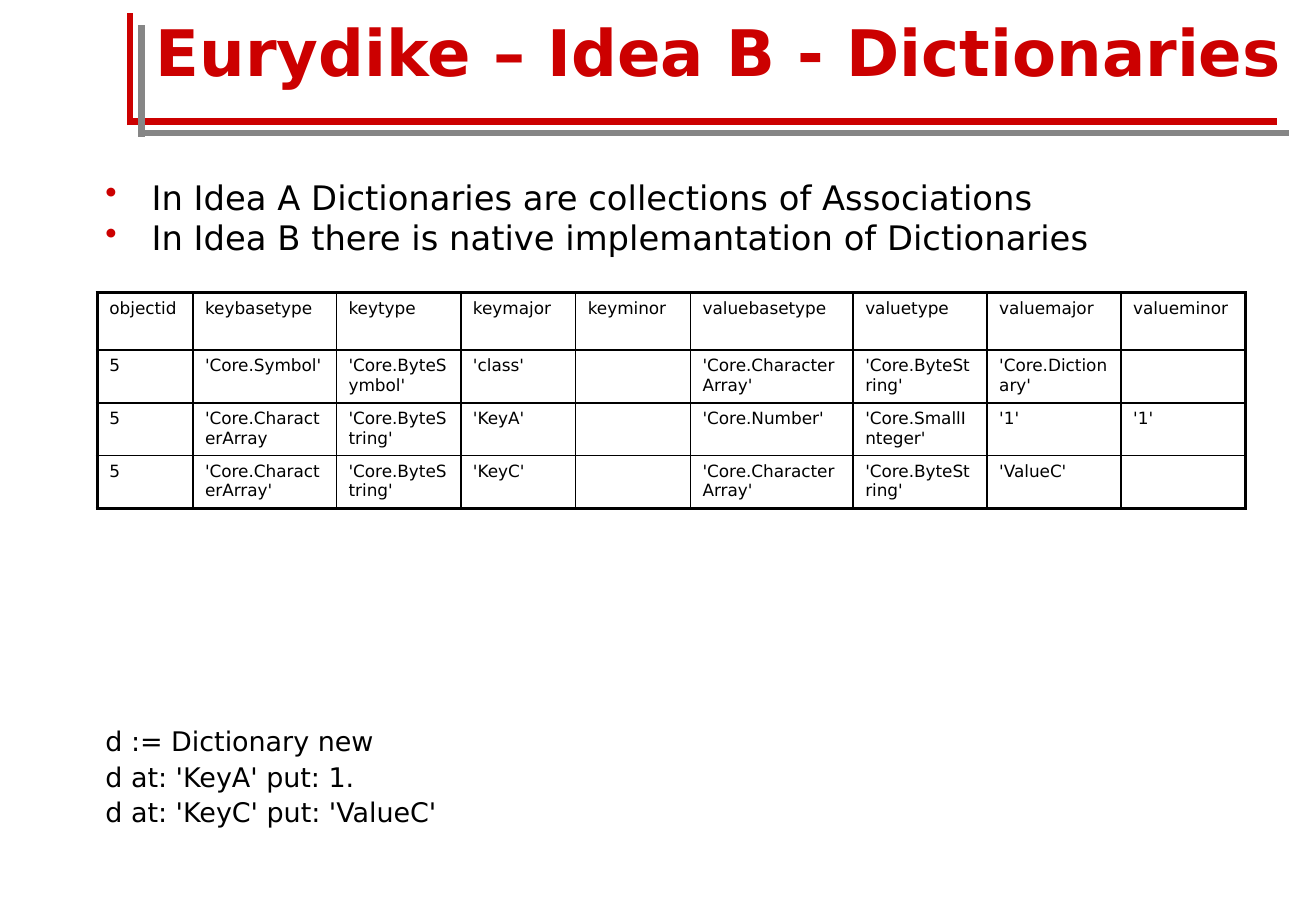
from lxml import etree
from pptx import Presentation
from pptx.dml.color import RGBColor
from pptx.enum.shapes import MSO_CONNECTOR
from pptx.enum.text import MSO_ANCHOR, PP_ALIGN
from pptx.oxml.ns import qn
from pptx.util import Inches, Pt

STRAIGHT = MSO_CONNECTOR.STRAIGHT
MIDDLE, TOP = MSO_ANCHOR.MIDDLE, MSO_ANCHOR.TOP
CENTER, LEFT = PP_ALIGN.CENTER, PP_ALIGN.LEFT

RED = RGBColor(0xCC, 0x00, 0x00)
GREY = RGBColor(0x86, 0x86, 0x86)
BLACK = RGBColor(0x00, 0x00, 0x00)

FONT = "DejaVu Sans"
SLIDE_W, SLIDE_H = Inches(10.83), Inches(7.5)
HANGING = Inches(0.38)
THIN, THICK = Pt(1), Pt(2.25)

TITLE_FONT = {"name": FONT, "size": Pt(38), "bold": True}
BULLET_FONT = {"name": FONT, "size": Pt(20)}
CODE_FONT = {"name": FONT, "size": Pt(16)}
CELL_FONT = {"name": FONT, "size": Pt(10)}

IDEAS = [
    "In Idea A Dictionaries are collections of Associations",
    "In Idea B there is native implemantation of Dictionaries",
]
CODE = [
    "d := Dictionary new",
    "d at: 'KeyA' put: 1.",
    "d at: 'KeyC' put: 'ValueC'",
]
ENTRIES = [
    ["objectid", "keybasetype", "keytype", "keymajor", "keyminor",
     "valuebasetype", "valuetype", "valuemajor", "valueminor"],
    ["5", "'Core.Symbol'", "'Core.ByteSymbol'", "'class'", "",
     "'Core.CharacterArray'", "'Core.ByteString'", "'Core.Dictionary'", ""],
    ["5", "'Core.CharacterArray", "'Core.ByteString'", "'KeyA'", "",
     "'Core.Number'", "'Core.SmallInteger'", "'1'", "'1'"],
    ["5", "'Core.CharacterArray'", "'Core.ByteString'", "'KeyC'", "",
     "'Core.CharacterArray'", "'Core.ByteString'", "'ValueC'", ""],
]
COLUMN_UNITS = [10, 15, 13, 12, 12, 17, 14, 14, 13]
ROW_UNITS = [47, 43, 43, 43]


def across(percent):
    return int(SLIDE_W * percent / 100)


def down(percent):
    return int(SLIDE_H * percent / 100)


def area(left, top, width, height):
    """Turn shares of the slide, in percent, into lengths."""
    return across(left), down(top), across(width), down(height)


def style(font, color, formats):
    for attribute, value in formats.items():
        setattr(font, attribute, value)
    font.color.rgb = color


def add_rule(slide, start, end, color):
    rule = slide.shapes.add_connector(
        STRAIGHT, across(start[0]), down(start[1]), across(end[0]), down(end[1]))
    rule.line.color.rgb = color
    rule.line.width = Pt(4)
    etree.SubElement(rule._element.spPr, qn("a:effectLst"))


def add_bracket(slide, shift_x, shift_y, color):
    """Draw the corner of two rules that frames the title."""
    for x1, y1, x2, y2 in ((9.79, 13.33, 97.05, 13.33), (9.88, 13.73, 9.88, 1.47)):
        add_rule(slide, (x1 + shift_x, y1 + shift_y),
                 (x2 + shift_x, y2 + shift_y), color)


def set_indent(paragraph, bullet):
    properties = paragraph._p.get_or_add_pPr()
    properties.set("marL", str(HANGING))
    properties.set("indent", str(-HANGING))
    if bullet:
        bullet_color = etree.SubElement(properties, qn("a:buClr"))
        etree.SubElement(bullet_color, qn("a:srgbClr"), val=str(RED))
        etree.SubElement(properties, qn("a:buChar"), char=bullet)


def add_text(slide, place, lines, formats, color=BLACK, anchor=TOP,
             align=LEFT, spacing=None, gap=None, hanging=False, bullet=None):
    frame = slide.shapes.add_textbox(*place).text_frame
    frame.word_wrap = True
    frame.vertical_anchor = anchor
    for index, line in enumerate(lines):
        paragraph = frame.add_paragraph() if index else frame.paragraphs[0]
        if hanging:
            set_indent(paragraph, bullet)
        paragraph.alignment = align
        if spacing:
            paragraph.line_spacing = spacing
        if index and gap:
            paragraph.space_before = gap
        run = paragraph.add_run()
        run.text = line
        style(run.font, color, formats)


def set_borders(cell, widths):
    properties = cell._tc.get_or_add_tcPr()
    for position, (side, width) in enumerate(widths.items()):
        border = etree.Element(qn(f"a:{side}"), w=str(width))
        fill = etree.SubElement(border, qn("a:solidFill"))
        etree.SubElement(fill, qn("a:srgbClr"), val=str(BLACK))
        properties.insert(position, border)


def add_entry_table(slide, place, entries):
    table = slide.shapes.add_table(len(entries), len(entries[0]), *place).table
    table.first_row = table.horz_banding = False
    for column, units in zip(table.columns, COLUMN_UNITS):
        column.width = place[2] * units // sum(COLUMN_UNITS)
    for row, units in zip(table.rows, ROW_UNITS):
        row.height = place[3] * units // sum(ROW_UNITS)

    last_row, last_column = len(entries) - 1, len(entries[0]) - 1
    for r, entry in enumerate(entries):
        for c, value in enumerate(entry):
            cell = table.cell(r, c)
            cell.fill.background()
            set_borders(cell, {
                "lnL": THICK if c == 0 else THIN,
                "lnR": THICK if c == last_column else THIN,
                "lnT": THICK if r == 0 else THIN,
                "lnB": THICK if r == last_row else THIN,
            })
            if value:
                run = cell.text_frame.paragraphs[0].add_run()
                run.text = value
                style(run.font, BLACK, CELL_FONT)


def main():
    deck = Presentation()
    deck.slide_width, deck.slide_height = SLIDE_W, SLIDE_H
    slide = deck.slides.add_slide(deck.slide_layouts[6])

    # Title with its double bracket
    add_bracket(slide, 0, 0, RED)
    add_bracket(slide, 0.87, 1.27, GREY)
    add_text(slide, area(9.23, 0, 90.77, 11.07),
             ["Eurydike – Idea B - Dictionaries"], TITLE_FONT,
             color=RED, anchor=MIDDLE, align=CENTER)

    # Ideas and sample code
    add_text(slide, area(7.11, 19.6, 91.5, 74.53), IDEAS, BULLET_FONT,
             spacing=0.8, gap=Pt(4.7), hanging=True, bullet="•")
    add_text(slide, area(7.11, 79.33, 91.5, 16.8), CODE, CODE_FONT,
             spacing=0.9, gap=Pt(3.7), hanging=True)

    # Stored dictionary entries
    add_entry_table(slide, area(7.39, 32.13, 87.26, 23.6), ENTRIES)

    deck.save("out.pptx")


if __name__ == "__main__":
    main()
